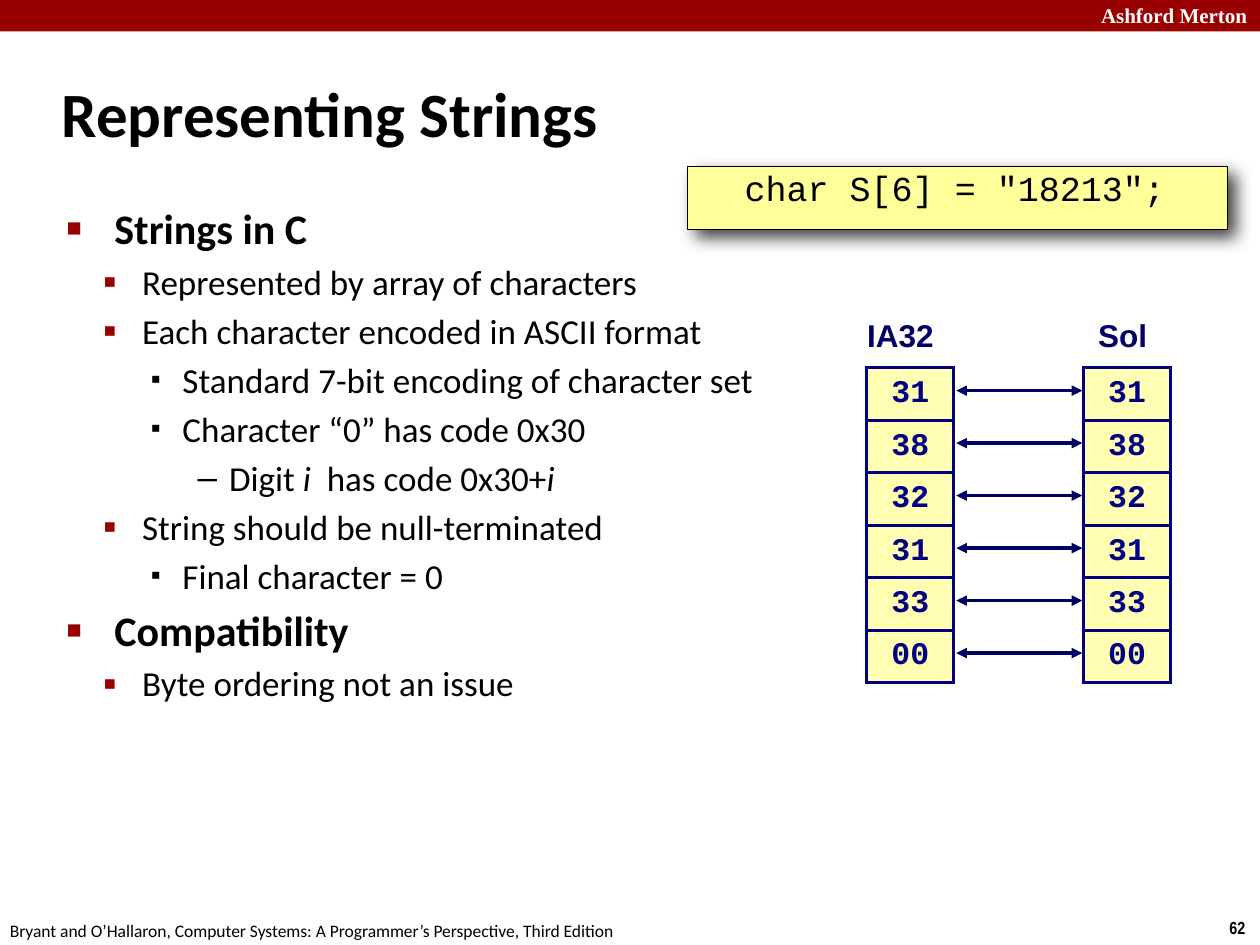
from lxml.etree import SubElement
from pptx import Presentation
from pptx.dml.color import RGBColor as Rgb
from pptx.enum.shapes import MSO_CONNECTOR as Connector, MSO_SHAPE as Shape
from pptx.enum.text import MSO_ANCHOR as Anchor, PP_ALIGN as Align
from pptx.oxml.ns import qn
from pptx.util import Inches, Pt

COLORS = {
    "banner": "990000", "ink": "000000", "white": "FFFFFF", "code": "FFFF99",
    "label": "000066", "cell": "FFFEB2", "border": "000080",
}

# Per outline level: left indent, hanging indent, bullet, bullet colour, bullet size %
LEVELS = [
    (0.38, -0.38, "■", "banner", 60),
    (0.6, -0.31, "▪", "banner", 110),
    (0.92, -0.25, "▪", "ink", 80),
    (1.29, -0.25, "–", "ink", 100),
]

# Asterisks enclose italic words
OUTLINE = [
    (0, "Strings in C"),
    (1, "Represented by array of characters"),
    (1, "Each character encoded in ASCII format"),
    (2, "Standard 7-bit encoding of character set"),
    (2, "Character “0” has code 0x30"),
    (3, "Digit *i*  has code 0x30+*i*"),
    (1, "String should be null-terminated"),
    (2, "Final character = 0"),
    (0, "Compatibility"),
    (1, "Byte ordering not an issue"),
]
STRING_BYTES = ["31", "38", "32", "31", "33", "00"]


def color(name):
    return Rgb.from_string(COLORS[name])


def add_xml(parent, tag, **attributes):
    return SubElement(parent, qn(tag), {key: str(value) for key, value in attributes.items()})


def add_color(parent, name):
    return add_xml(parent, "a:srgbClr", val=COLORS[name])


def write(paragraph, text, font="Calibri", size=20, ink="ink", bold=False, align=Align.LEFT):
    paragraph.alignment = align
    for index, part in enumerate(text.split("*")):
        if part:
            run = paragraph.add_run()
            run.text = part
            run.font.name, run.font.size = font, Pt(size)
            run.font.bold, run.font.italic = bold, index % 2 == 1
            run.font.color.rgb = color(ink)


class SlideBuilder:
    """Places elements on a grid of 100 columns by 75 rows."""
    COLUMNS, ROWS = 100, 75

    def __init__(self, presentation):
        self.width, self.height = presentation.slide_width, presentation.slide_height
        self.slide = presentation.slides.add_slide(presentation.slide_layouts[6])
        self.shapes = self.slide.shapes

    def x(self, columns):
        return round(self.width * columns / self.COLUMNS)

    def y(self, rows):
        return round(self.height * rows / self.ROWS)

    def area(self, left, top, width, height):
        return self.x(left), self.y(top), self.x(width), self.y(height)

    def box(self, area, fill, line=None):
        shape = self.shapes.add_shape(Shape.RECTANGLE, *self.area(*area))
        shape.shadow.inherit = False
        shape.fill.solid()
        shape.fill.fore_color.rgb = color(fill)
        if line:
            shape.line.color.rgb = color(line)
            shape.line.width = Pt(0.5)
        else:
            shape.line.fill.background()
        return shape

    def text(self, area, text, wrap=False, anchor=Anchor.TOP, sides=(0.1, 0.1), **style):
        frame = self.shapes.add_textbox(*self.area(*area)).text_frame
        frame.word_wrap, frame.vertical_anchor = wrap, anchor
        frame.margin_left, frame.margin_right = map(Inches, sides)
        write(frame.paragraphs[0], text, **style)

    def code(self, area, text):
        shape = self.box(area, "code", "ink")
        effects = shape._element.spPr.find(qn("a:effectLst"))
        shadow = add_xml(effects, "a:outerShdw", blurRad=Pt(10), dist=Pt(6),
                         dir=45 * 60000, algn="tl", rotWithShape=0)
        add_xml(add_color(shadow, "ink"), "a:alpha", val=75000)
        frame = shape.text_frame
        frame.word_wrap, frame.vertical_anchor = True, Anchor.TOP
        frame.margin_left = frame.margin_top = frame.margin_bottom = Inches(0.03)
        frame.margin_right = Inches(0.07)
        frame.paragraphs[0].line_spacing = 0.95
        write(frame.paragraphs[0], text, font="Courier New", align=Align.CENTER)

    def outline(self, area, items):
        frame = self.shapes.add_textbox(*self.area(*area)).text_frame
        frame.word_wrap = True
        for index, (level, text) in enumerate(items):
            paragraph = frame.add_paragraph() if index else frame.paragraphs[0]
            paragraph.level = level
            top = level == 0
            write(paragraph, text, size=24 if top else 20, bold=top)
            left, hanging, bullet, ink, percent = LEVELS[level]
            properties = paragraph._p.get_or_add_pPr()
            properties.set("marL", str(Inches(left)))
            properties.set("indent", str(Inches(hanging)))
            add_xml(add_xml(properties, "a:spcBef"), "a:spcPct", val=20000)
            add_color(add_xml(properties, "a:buClr"), ink)
            add_xml(properties, "a:buSzPct", val=percent * 1000)
            add_xml(properties, "a:buFont", typeface="Arial")
            add_xml(properties, "a:buChar", char=bullet)

    def byte_column(self, area, values):
        table = self.shapes.add_table(len(values), 1, *self.area(*area)).table
        table.first_row = table.horz_banding = False
        for row, value in enumerate(values):
            cell = table.cell(row, 0)
            cell.vertical_anchor = Anchor.MIDDLE
            cell.margin_left = cell.margin_right = Inches(0.06)
            cell.margin_top = cell.margin_bottom = Inches(0.05)
            write(cell.text_frame.paragraphs[0], value, font="Courier New", size=18,
                  ink="border", bold=True, align=Align.CENTER)
            properties = cell._tc.get_or_add_tcPr()
            for side in "LRTB":
                border = add_xml(properties, f"a:ln{side}", w=Pt(2))
                add_color(add_xml(border, "a:solidFill"), "border")
            cell.fill.solid()
            cell.fill.fore_color.rgb = color("cell")

    def double_arrow(self, left, right, row):
        arrow = self.shapes.add_connector(
            Connector.STRAIGHT, self.x(left), self.y(row), self.x(right), self.y(row))
        arrow.line.color.rgb = color("label")
        arrow.line.width = Pt(2)
        line = arrow.line._get_or_add_ln()
        add_xml(line, "a:headEnd", type="triangle")
        add_xml(line, "a:tailEnd", type="triangle")
        add_xml(arrow._element.spPr, "a:effectLst")


def main():
    presentation = Presentation()
    presentation.slide_width, presentation.slide_height = Inches(10), Inches(7.5)
    builder = SlideBuilder(presentation)

    # Banner and footer
    builder.box((0, 0, 100, 2.5), "banner")
    builder.text((86.4, -0.3, 14.3, 3), "Ashford Merton", wrap=True,
                 font="Times New Roman", size=12, ink="white", bold=True)
    builder.text((96.6, 72.3, 3.4, 2.7), "62", font="Arial Narrow", size=10, bold=True)
    builder.text((-0.2, 72.5, 50.8, 2.7),
                 "Bryant and O’Hallaron, Computer Systems: A Programmer’s Perspective, Third Edition",
                 size=10)

    # Declaration, title and outline
    builder.code((54.6, 13.2, 42.8, 5), 'char S[6] = "18213";')
    builder.text((3.9, 4.8, 83, 8.3), "Representing Strings", wrap=True,
                 anchor=Anchor.MIDDLE, size=36, bold=True)
    builder.outline((4.3, 15.6, 86.4, 54.4), OUTLINE)

    # Matching bytes on the two machines
    top, height = 29.2, 25
    pitch = height / len(STRING_BYTES)
    for machine, label_left, label_width, left in [("IA32", 68.2, 6.9, 68.8),
                                                   ("Sol", 86.1, 6.4, 86)]:
        builder.text((label_left, 24.6, label_width, 4.2), machine, sides=(0.02, 0.06),
                     font="Arial", size=18, ink="label", bold=True, align=Align.CENTER)
        builder.byte_column((left, top, 6.9, height), STRING_BYTES)
    for index in range(len(STRING_BYTES)):
        builder.double_arrow(75.9, 85.9, top + 1.8 + pitch * index)

    presentation.save("out.pptx")


if __name__ == "__main__":
    main()
